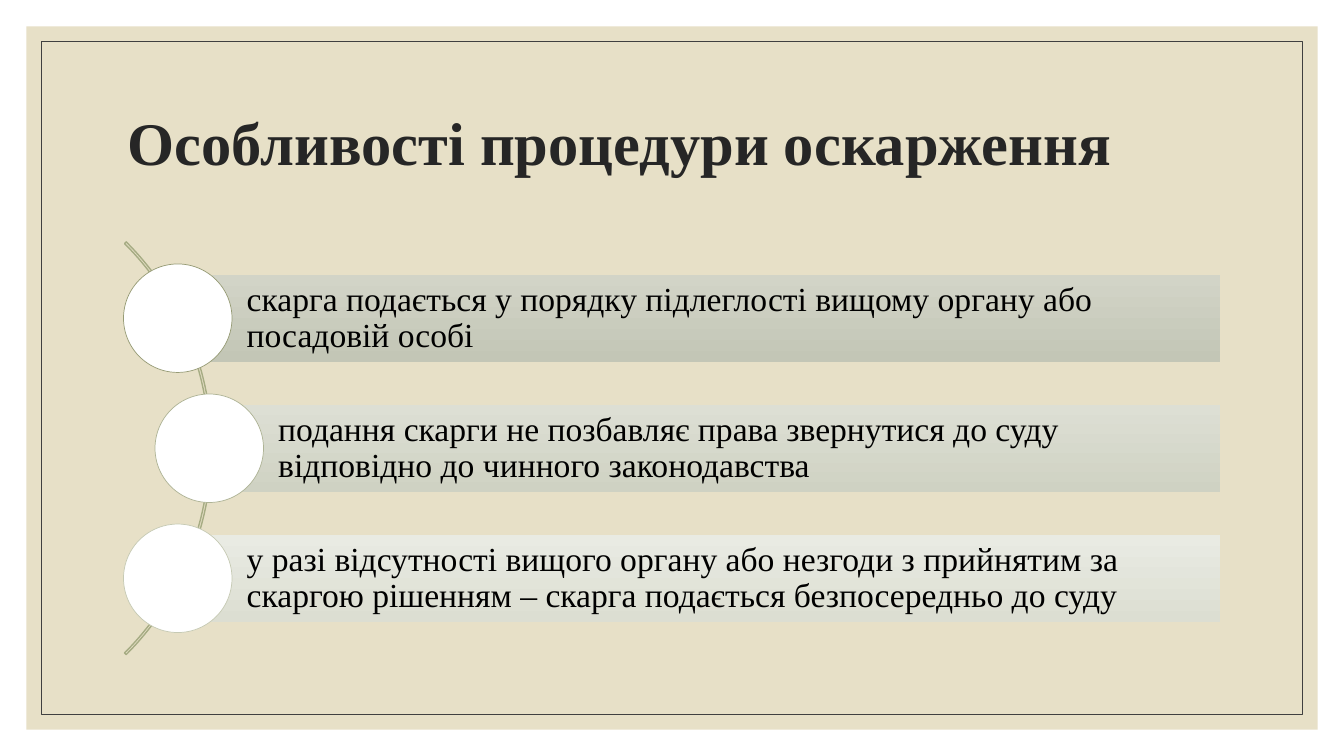
"""Build the slide on the features of the appeal procedure."""
import pptx
import pptx.util
import pptx.dml.color
import pptx.enum.shapes
import pptx.enum.text

Pt = pptx.util.Pt
SHAPE = pptx.enum.shapes.MSO_SHAPE

TITLE = "Особливості процедури оскарження"
POINTS = [
    ("скарга подається у порядку підлеглості вищому органу або посадовій особі",
     "D2D4C7", "C3C6B6", "969B75"),
    ("подання скарги не позбавляє права звернутися до суду відповідно до чинного законодавства",
     "DDDFD4", "CFD2C3", "AEB395"),
    ("у разі відсутності вищого органу або незгоди з прийнятим за скаргою рішенням"
     " – скарга подається безпосередньо до суду",
     "E9EBE3", "DCDED2", "C6CAB4"),
]
COLORS = {"panel": "E7E0C7", "frame": "404040", "title": "262626",
          "text": "000000", "arc": "A6AC83", "circle": "FFFFFF"}
FONT = "Times New Roman"
WIDTH, HEIGHT = 960, 540
PANEL_MARGIN, FRAME_MARGIN = 18.8, 29.5
ARC_SIZE, ARC_LEFT, ARC_MIDDLE = 416.9, -265.7, 320.2
BAR_HEIGHT, BAR_RIGHT, BAR_STEP = 62, 871.8, 92.9
BAR_LEFTS = [127, 149.5, 127]
CIRCLE_SIZE = 77.5


def rgb(value):
    return pptx.dml.color.RGBColor.from_string(value)


def add_box(page, kind, left, top, width, height, fill=None, line=None, weight=0.5):
    box = page.shapes.add_shape(kind, Pt(left), Pt(top), Pt(width), Pt(height))
    box.shadow.inherit = False
    if fill is None:
        box.fill.background()
    elif isinstance(fill, tuple):
        box.fill.gradient()
        box.fill.gradient_angle = 270
        for stop, color in zip(box.fill.gradient_stops, fill):
            stop.color.rgb = rgb(color)
    else:
        box.fill.solid()
        box.fill.fore_color.rgb = rgb(fill)
    if line is None:
        box.line.fill.background()
    else:
        box.line.color.rgb = rgb(line)
        box.line.width = Pt(weight)
    return box


def write_text(box, text, size, color, bold=False, left_inset=7.2, inset=3.6):
    frame = box.text_frame
    frame.word_wrap = True
    frame.auto_size = pptx.enum.text.MSO_AUTO_SIZE.NONE
    frame.vertical_anchor = pptx.enum.text.MSO_ANCHOR.MIDDLE
    frame.margin_left = Pt(left_inset)
    frame.margin_top = frame.margin_bottom = frame.margin_right = Pt(inset)
    para = frame.paragraphs[0]
    para.alignment = pptx.enum.text.PP_ALIGN.LEFT
    para.line_spacing = 0.9
    span = para.add_run()
    span.text = text
    span.font.name = FONT
    span.font.size = Pt(size)
    span.font.bold = bold
    span.font.color.rgb = rgb(color)


def add_background(page):
    for margin, fill, line in [(PANEL_MARGIN, COLORS["panel"], None),
                               (FRAME_MARGIN, None, COLORS["frame"])]:
        add_box(page, SHAPE.RECTANGLE, margin, margin,
                WIDTH - 2 * margin, HEIGHT - 2 * margin, fill, line)


def add_title(page):
    title = page.shapes.title
    title.left, title.top, title.width, title.height = Pt(84), Pt(50.4), Pt(792), Pt(108)
    write_text(title, TITLE, 43.2, COLORS["title"], bold=True)
    title.element.getparent().append(title.element)


def add_points(page):
    arc = add_box(page, SHAPE.BLOCK_ARC, ARC_LEFT, ARC_MIDDLE - ARC_SIZE / 2,
                  ARC_SIZE, ARC_SIZE, line=COLORS["arc"], weight=1)
    for index, value in enumerate((189, 27, 0.004)):
        arc.adjustments[index] = value
    for index, (text, light, dark, outline) in enumerate(POINTS):
        left = BAR_LEFTS[index]
        middle = ARC_MIDDLE + (index - 1) * BAR_STEP
        bar = add_box(page, SHAPE.RECTANGLE, left, middle - BAR_HEIGHT / 2,
                      BAR_RIGHT - left, BAR_HEIGHT, (light, dark))
        write_text(bar, text, 24, COLORS["text"], left_inset=49.2, inset=4.8)
        add_box(page, SHAPE.OVAL, left - CIRCLE_SIZE / 2, middle - CIRCLE_SIZE / 2,
                CIRCLE_SIZE, CIRCLE_SIZE, COLORS["circle"], outline)


def main():
    deck = pptx.Presentation()
    deck.slide_width, deck.slide_height = Pt(WIDTH), Pt(HEIGHT)
    page = deck.slides.add_slide(deck.slide_layouts[5])
    add_background(page)
    add_title(page)
    add_points(page)
    deck.save("out.pptx")


if __name__ == "__main__":
    main()
